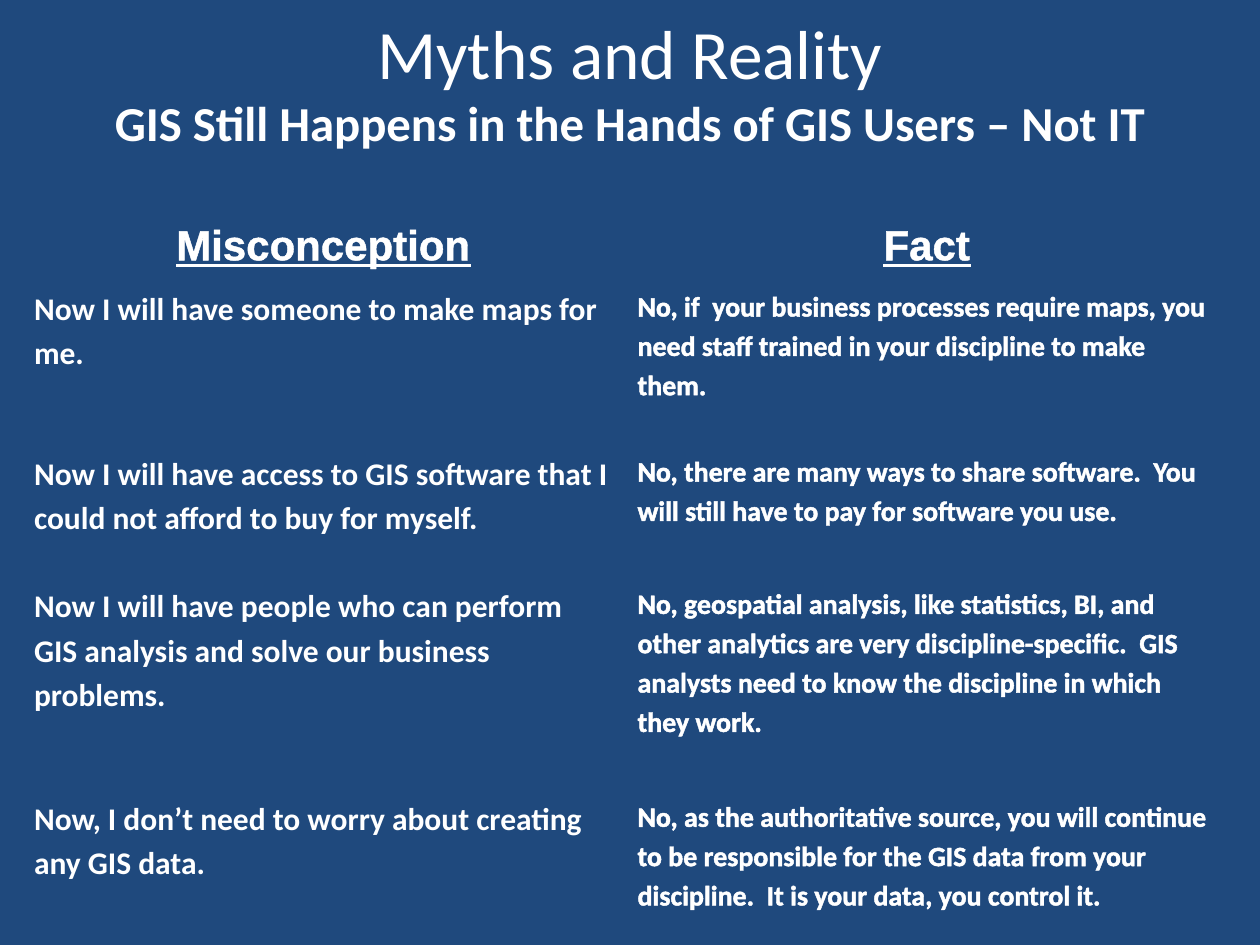
from pptx import Presentation
from pptx.dml.color import RGBColor as Rgb
from pptx.enum.text import MSO_ANCHOR as Anchor, PP_ALIGN as Align
from pptx.oxml import parse_xml
from pptx.oxml.ns import nsdecls
from pptx.util import Inches, Pt

TITLE = "Myths and Reality"
CLAIM = "GIS Still Happens in the Hands of GIS Users – Not IT"
HEADS = ("Misconception", "Fact")
PAIRS = [
    ("Now I will have someone to make maps for me.",
     "No, if  your business processes require maps, you need staff trained in your discipline to make them."),
    ("Now I will have access to GIS software that I could not afford to buy for myself.",
     "No, there are many ways to share software.  You will still have to pay for software you use."),
    ("Now I will have people who can perform GIS analysis and solve our business problems.",
     "No, geospatial analysis, like statistics, BI, and other analytics are very discipline-specific.  GIS analysts need to know the discipline in which they work."),
    ("Now, I don’t need to worry about creating any GIS data.",
     "No, as the authoritative source, you will continue to be responsible for the GIS data from your discipline.  It is your data, you control it."),
]
HIGHS = (0.52, 1.31, 1.05, 1.69, 1.04)
WIDE = 4.79
PLAIN = "{2D5ABB26-0587-4C30-8999-92F81FD0307C}"

THEME = {
    "back": "1F497D",
    "ink": "FFFFFF",
    "title": dict(name="Calibri", size=Pt(39.6), bold=False),
    "claim": dict(name="Calibri", size=Pt(27.9), bold=True),
    "head": dict(name="Arial", size=Pt(24), bold=True, underline=True),
    "myth": dict(name="Calibri", size=Pt(18), bold=True),
    "fact": dict(name="Calibri", size=Pt(16), bold=True),
}
HEAD = dict(alignment=Align.CENTER)
MYTH = dict(line_spacing=1.15)
FACT = dict(line_spacing=1.15, space_after=Pt(10))


def apply(item, form):
    for key, val in form.items():
        setattr(item, key, val)


def write(para, text, kind, edge=False):
    run = para.add_run()
    run.text = text
    apply(run.font, THEME[kind])
    run.font.color.rgb = Rgb.from_string(THEME["ink"])
    if edge:
        line = parse_xml(
            f'<a:ln {nsdecls("a")} w="{Pt(0.75)}"><a:solidFill>'
            f'<a:srgbClr val="{THEME["ink"]}"/></a:solidFill></a:ln>')
        run.font._element.insert(0, line)


def add_title(slide):
    box = slide.shapes.add_textbox(*map(Inches, (0.5, 0.08, 9, 1.12)))
    frame = box.text_frame
    apply(frame, dict(word_wrap=True, vertical_anchor=Anchor.MIDDLE))
    para = frame.paragraphs[0]
    para.alignment = Align.CENTER
    write(para, TITLE, "title")
    para.add_line_break()
    write(para, CLAIM, "claim")


def add_grid(slide):
    rows = [HEADS] + PAIRS
    frame = slide.shapes.add_table(
        len(rows), len(HEADS), Inches(0.17), Inches(1.69),
        Inches(WIDE * len(HEADS)), Inches(sum(HIGHS)))
    table = frame.table
    apply(table, dict(first_row=False, horz_banding=False))
    table._tbl.tblPr.find("{*}tableStyleId").text = PLAIN
    for col in table.columns:
        col.width = Inches(WIDE)
    for top, (pair, high) in enumerate(zip(rows, HIGHS)):
        table.rows[top].height = Inches(high)
        for side, text in enumerate(pair):
            cell = table.cell(top, side)
            cell.fill.background()
            para = cell.text_frame.paragraphs[0]
            if top == 0:
                cell.vertical_anchor = Anchor.MIDDLE
                kind, form = "head", HEAD
            else:
                kind, form = (("myth", MYTH), ("fact", FACT))[side]
            apply(para, form)
            write(para, text, kind, edge=kind != "myth")


def main():
    deck = Presentation()
    apply(deck, dict(slide_width=Inches(10), slide_height=Inches(7.5)))
    slide = deck.slides.add_slide(deck.slide_layouts[6])
    fill = slide.background.fill
    fill.solid()
    fill.fore_color.rgb = Rgb.from_string(THEME["back"])
    add_title(slide)
    add_grid(slide)
    deck.save("out.pptx")


if __name__ == "__main__":
    main()
